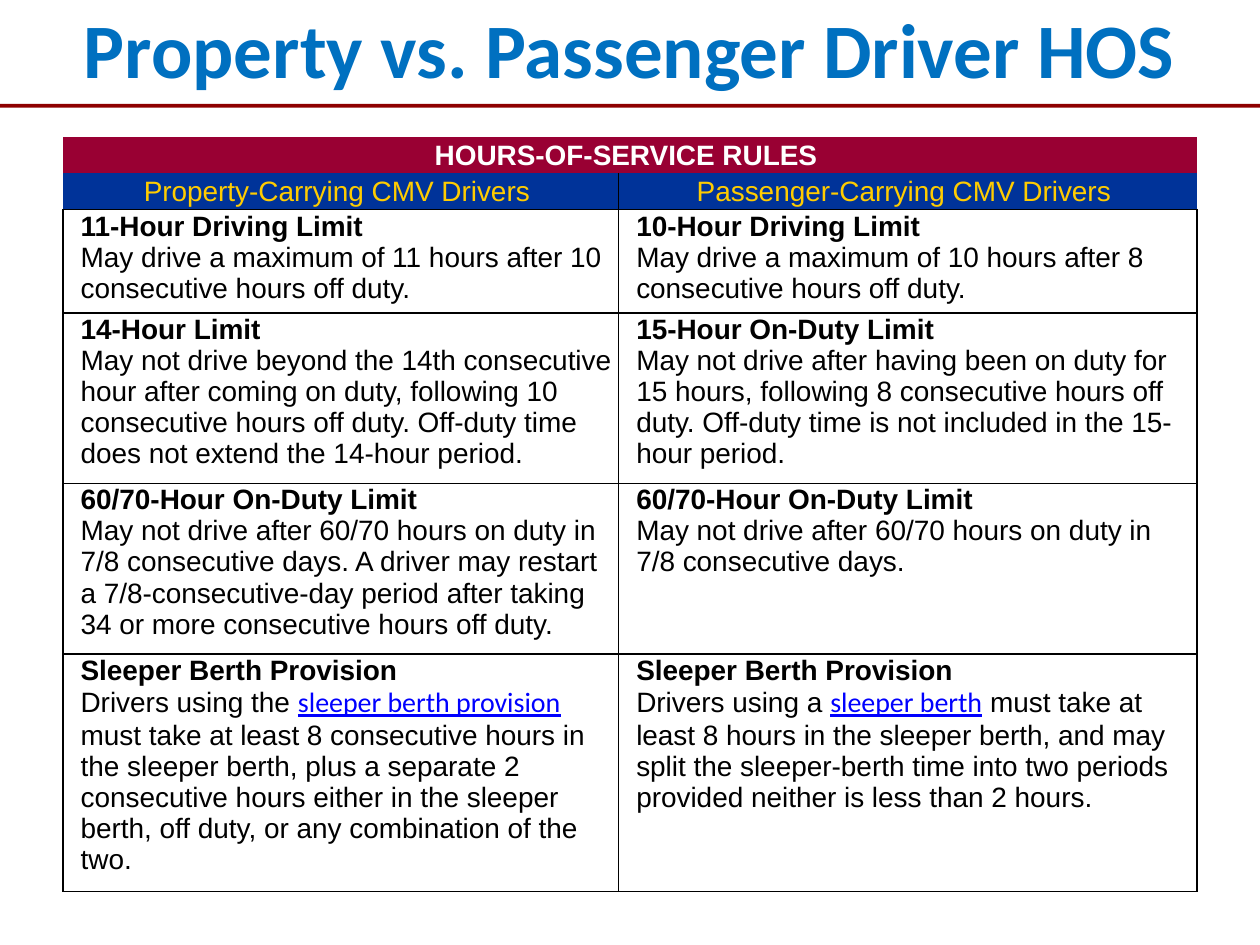
from lxml import etree
from pptx import Presentation
from pptx import util as u
from pptx.dml import color
from pptx.enum import shapes, text
from pptx.oxml import ns


def paint(target, shade):
    target.fill.solid()
    target.fill.fore_color.rgb = color.RGBColor.from_string(shade)


def style(span, size, face, shade, bold=False, underline=False):
    span.font.size = u.Pt(size)
    span.font.name = face
    span.font.bold = bold
    span.font.underline = underline
    paint(span.font, shade)


HEADERS = [
    (["HOURS-OF-SERVICE RULES "] * 2, "990033", "FFFFFF", True, ["", ""]),
    (["Property-Carrying CMV Drivers ", "Passenger-Carrying CMV Drivers "],
     "003399", "FFCC00", False, ["RB", "LB"]),
]
RULES = [
    [("11-Hour Driving Limit",
      "May drive a maximum of 11 hours after 10 consecutive hours off duty."),
     ("10-Hour Driving Limit",
      "May drive a maximum of 10 hours after 8 consecutive hours off duty.")],
    [("14-Hour Limit",
      "May not drive beyond the 14th consecutive hour after coming on duty, "
      "following 10 consecutive hours off duty. Off-duty time does not extend "
      "the 14-hour period."),
     ("15-Hour On-Duty Limit",
      "May not drive after having been on duty for 15 hours, following 8 "
      "consecutive hours off duty. Off-duty time is not included in the "
      "15-hour period.")],
    [("60/70-Hour On-Duty Limit",
      "May not drive after 60/70 hours on duty in 7/8 consecutive days. "
      "A driver may restart a 7/8-consecutive-day period after taking 34 or "
      "more consecutive hours off duty."),
     ("60/70-Hour On-Duty Limit",
      "May not drive after 60/70 hours on duty in 7/8 consecutive days.")],
    [("Sleeper Berth Provision",
      "Drivers using the |sleeper berth provision| must take at least 8 "
      "consecutive hours in the sleeper berth, plus a separate 2 consecutive "
      "hours either in the sleeper berth, off duty, or any combination of "
      "the two."),
     ("Sleeper Berth Provision",
      "Drivers using a |sleeper berth| must take at least 8 hours in the "
      "sleeper berth, and may split the sleeper-berth time into two periods "
      "provided neither is less than 2 hours.")],
]
COLUMNS = [4.41, 4.59]
ROWS = [0.28, 0.28, 0.8, 1.32, 1.32, 1.85]

deck = Presentation()
deck.slide_width, deck.slide_height = u.Inches(10), u.Inches(7.5)
width, height = deck.slide_width, deck.slide_height
page = deck.slides.add_slide(deck.slide_layouts[6])

rule = page.shapes.add_shape(
    shapes.MSO_SHAPE.RECTANGLE, 0, int(height * 0.11), width, u.Inches(0.03))
rule.shadow.inherit = False
paint(rule, "8E0000")
rule.line.fill.background()

title = page.shapes.add_textbox(0, -height // 30, width, height // 6)
title.text_frame.word_wrap = True
title.text_frame.vertical_anchor = text.MSO_ANCHOR.MIDDLE
title.text_frame.text = "Property vs. Passenger Driver HOS"
para = title.text_frame.paragraphs[0]
para.alignment = text.PP_ALIGN.CENTER
style(para.runs[0], 44, "Calibri", "0070C0", bold=True)

table = page.shapes.add_table(
    len(ROWS), len(COLUMNS), width // 20, u.Inches(1.09),
    u.Inches(sum(COLUMNS)), u.Inches(sum(ROWS))).table
table.first_row = table.horz_banding = False
for column, size in zip(table.columns, COLUMNS):
    column.width = u.Inches(size)
for row, size in zip(table.rows, ROWS):
    row.height = u.Inches(size)

for r in range(len(ROWS)):
    for c in range(len(COLUMNS)):
        cell = table.cell(r, c)
        cell.margin_left = cell.margin_right = u.Inches(0.01)
        cell.margin_top = cell.margin_bottom = u.Inches(0.01)
        edges = HEADERS[r][4][c] if r < len(HEADERS) else "LRTB"
        for side in "LRTB":
            line = etree.SubElement(
                cell._tc.get_or_add_tcPr(), ns.qn("a:ln" + side), w="12700")
            if side in edges:
                solid = etree.SubElement(line, ns.qn("a:solidFill"))
                etree.SubElement(solid, ns.qn("a:srgbClr"), val="000000")
            else:
                etree.SubElement(line, ns.qn("a:noFill"))
        para = cell.text_frame.paragraphs[0]
        if r < len(HEADERS):
            labels, fill, ink, bold, _ = HEADERS[r]
            paint(cell, fill)
            cell.vertical_anchor = text.MSO_ANCHOR.MIDDLE
            if r > 0 or c == 0:
                para.text = labels[c]
                para.alignment = text.PP_ALIGN.CENTER
                style(para.runs[0], 16, "Arial", ink, bold=bold)
            continue
        cell.fill.background()
        heading, body = RULES[r - len(HEADERS)][c]
        pieces = body.split("|")
        para.text = heading + "\v" + pieces[0]
        for piece in pieces[1:]:
            para.add_run().text = piece
        props = para._p.get_or_add_pPr()
        props.set("marL", str(u.Inches(0.13)))
        props.set("indent", "0")
        etree.SubElement(para._p.find(ns.qn("a:br")), ns.qn("a:rPr"), sz="1600")
        for i, span in enumerate(para.runs):
            if i == 2:
                style(span, 16, "Calibri", "0000FF", underline=True)
            else:
                style(span, 16, "Arial", "000000", bold=i == 0)
table.cell(0, 0).merge(table.cell(0, 1))

deck.save("out.pptx")
